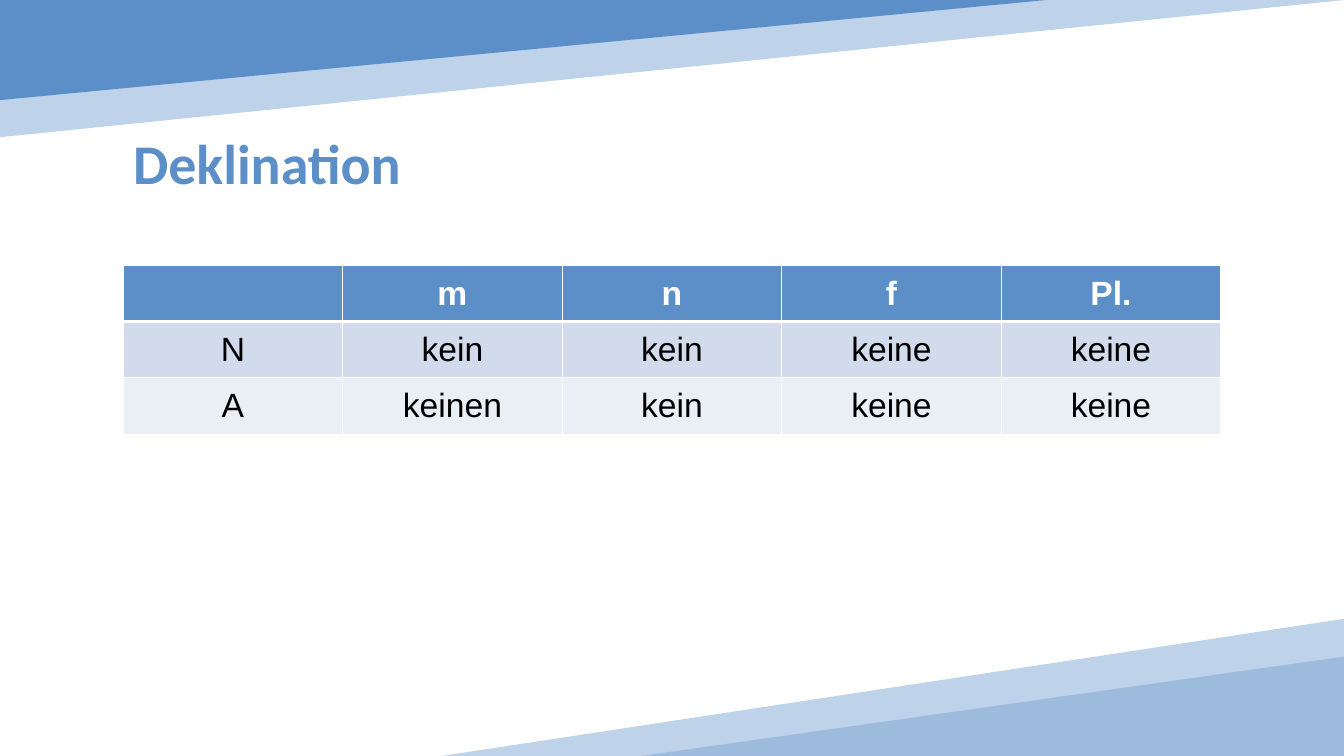
"""Build the "Deklination" slide with a declension table for "kein"."""
from lxml.etree import SubElement
from pptx import Presentation
from pptx.dml.color import RGBColor
from pptx.enum.shapes import MSO_SHAPE
from pptx.enum.text import MSO_ANCHOR, MSO_AUTO_SIZE, PP_ALIGN
from pptx.oxml.ns import qn
from pptx.util import Pt

BLUE, PALE_BLUE, SOFT_BLUE = "5C8FC7", "BED2E9", "9DBCDD"
WHITE, BLACK = "FFFFFF", "000000"


def paint(target, color):
    target.fill.solid()
    target.fill.fore_color.rgb = RGBColor.from_string(color)


def add_border(cell, side, width):
    line = SubElement(cell._tc.get_or_add_tcPr(), qn(f"a:ln{side}"), w=str(Pt(width)))
    SubElement(SubElement(line, qn("a:solidFill")), qn("a:srgbClr"), val=WHITE)


presentation = Presentation()
presentation.slide_width, presentation.slide_height = Pt(960), Pt(540)
slide = presentation.slides.add_slide(presentation.slide_layouts[6])

bottom_band = [(960, 442), (960, 533), (646, 540), (315.5, 540)]
top_band = [(0, 98), (0, 7), (467, 0), (960, 0)]
corners = [
    (bottom_band, (458, 469, 502, 71), 0, SOFT_BLUE),
    (top_band, (0, 0, 747.5, 71.5), 180, BLUE),
]
for band_points, wedge_box, rotation, wedge_color in corners:
    builder = slide.shapes.build_freeform(Pt(band_points[0][0]), Pt(band_points[0][1]))
    builder.add_line_segments([(Pt(x), Pt(y)) for x, y in band_points[1:]])
    band = builder.convert_to_shape()
    wedge = slide.shapes.add_shape(
        MSO_SHAPE.ISOSCELES_TRIANGLE, *[Pt(length) for length in wedge_box])
    wedge.adjustments[0] = 1
    wedge.rotation = rotation
    for shape, color in ((band, PALE_BLUE), (wedge, wedge_color)):
        shape.shadow.inherit = False
        shape.line.fill.background()
        paint(shape, color)

rows = [
    ["", "m", "n", "f", "Pl."],
    ["N", "kein", "kein", "keine", "keine"],
    ["A", "keinen", "kein", "keine", "keine"],
]
row_fills = [BLUE, "D2DBEB", "EAEEF5"]
table = slide.shapes.add_table(
    len(rows), len(rows[0]), Pt(88), Pt(189.5), Pt(784), Pt(120.6)).table
for column in table.columns:
    column.width = Pt(156.8)
for row_index, words in enumerate(rows):
    is_header = row_index == 0
    table.rows[row_index].height = Pt(40.2)
    for column_index, word in enumerate(words):
        cell = table.cell(row_index, column_index)
        widths = {"L": 1, "R": 1, "T": 3 if row_index == 1 else 1, "B": 3 if is_header else 1}
        for side, width in widths.items():
            add_border(cell, side, width)
        paint(cell, row_fills[row_index])
        cell.vertical_anchor = MSO_ANCHOR.MIDDLE
        cell.text_frame.text = word
        paragraph = cell.text_frame.paragraphs[0]
        paragraph.alignment = PP_ALIGN.CENTER
        for run in paragraph.runs:
            run.font.name, run.font.size, run.font.bold = "Arial", Pt(24), is_header
            run.font.color.rgb = RGBColor.from_string(WHITE if is_header else BLACK)

title = slide.shapes.add_textbox(Pt(88), Pt(88.5), Pt(480), Pt(55.5))
title.text_frame.word_wrap = True
title.text_frame.auto_size = MSO_AUTO_SIZE.SHAPE_TO_FIT_TEXT
title.text_frame.text = "Deklination"
title_font = title.text_frame.paragraphs[0].runs[0].font
title_font.name, title_font.size, title_font.bold = "Calibri", Pt(40), True
title_font.color.rgb = RGBColor.from_string(BLUE)

presentation.save("out.pptx")
